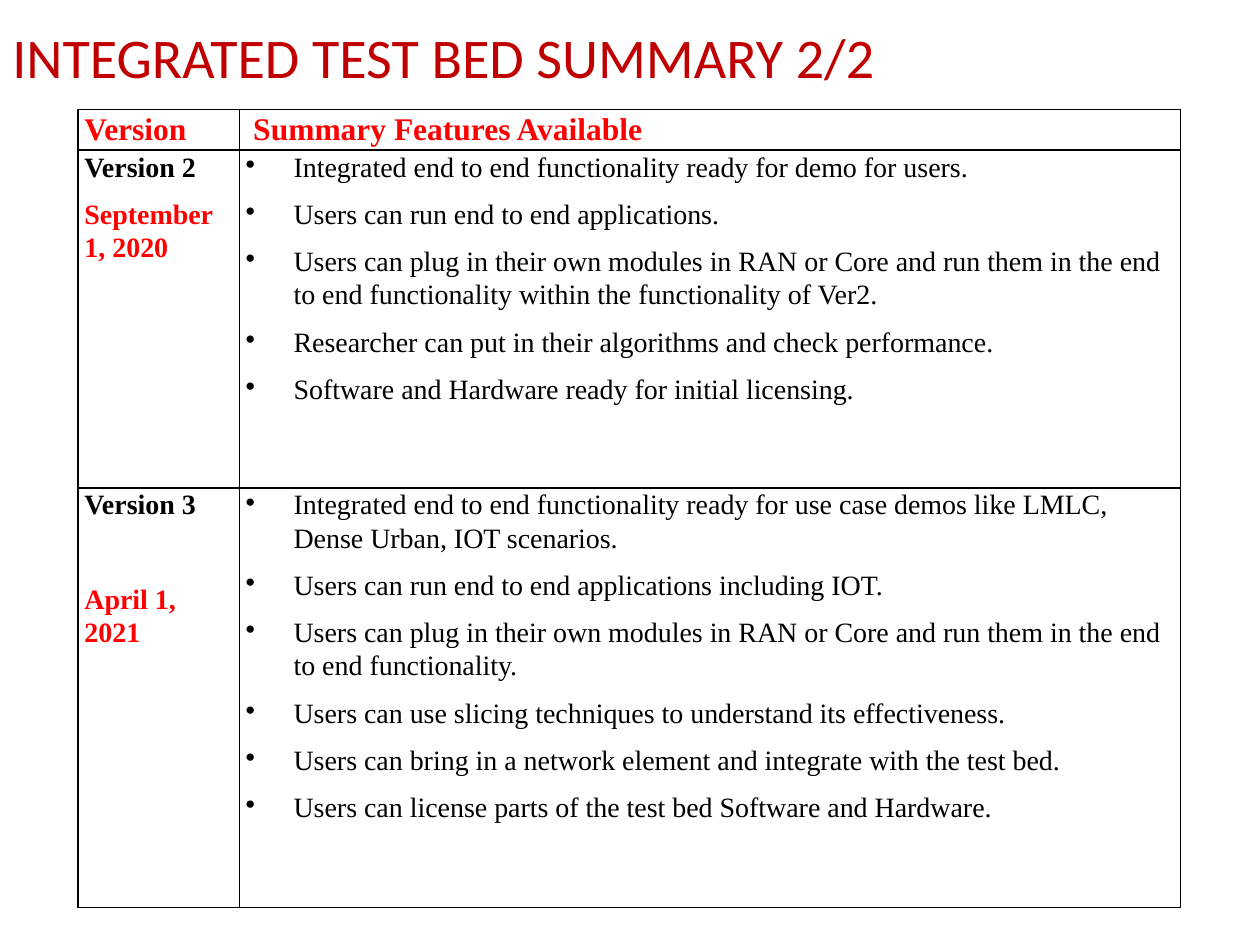
from pptx import Presentation
from pptx.dml.color import RGBColor
from pptx.enum.text import MSO_ANCHOR
from pptx.oxml.ns import qn
from pptx.util import Inches, Pt
from lxml import etree

MIDDLE = MSO_ANCHOR.MIDDLE
BLACK, RED, DARK_RED = "000000", "FF0000", "C00000"
TITLE_FONT, TABLE_FONT = "Calibri", "Times New Roman"

SLIDE_W, SLIDE_H = 10, 7.5
TABLE_LEFT, TABLE_TOP = 0.62, 0.87
COLUMN_WIDTHS = [1.28, 7.47]
ROW_HEIGHTS = [0.29, 2.68, 3.33]
CELL_INSET = 0.05
BULLET_INDENT = 0.38
HEADINGS = ["Version", "Summary Features Available"]
HEADING_INSETS = [CELL_INSET, 0.11]

# Version, date, space before the date in points, features
RELEASES = [
    ("Version 2", "September 1, 2020", 0, [
        "Integrated end to end functionality ready for demo for users.",
        "Users can run end to end applications.",
        "Users can plug in their own modules in RAN or Core and run them in "
        "the end to end functionality within the functionality of Ver2.",
        "Researcher can put in their algorithms and check performance.",
        "Software and Hardware ready for initial licensing.",
    ]),
    ("Version 3", "April 1, 2021", 27, [
        "Integrated end to end functionality ready for use case demos like "
        "LMLC, Dense Urban, IOT scenarios.",
        "Users can run end to end applications including IOT.",
        "Users can plug in their own modules in RAN or Core and run them in "
        "the end to end functionality.",
        "Users can use slicing techniques to understand its effectiveness.",
        "Users can bring in a network element and integrate with the test bed.",
        "Users can license parts of the test bed Software and Hardware.",
    ]),
]


def color(hex_string):
    return RGBColor.from_string(hex_string)


def add_run(paragraph, text, size, ink, font=TABLE_FONT, bold=False):
    run = paragraph.add_run()
    run.text = text
    run.font.size = Pt(size)
    run.font.name = font
    run.font.bold = bold
    run.font.color.rgb = color(ink)


def next_paragraph(cell):
    """Give the empty first paragraph of a cell, or a new one after it."""
    frame = cell.text_frame
    first = frame.paragraphs[0]
    paragraph = frame.add_paragraph() if first.runs else first
    paragraph.line_spacing = 1.07
    paragraph.space_after = Pt(8)
    return paragraph


def add_line(cell, text, size=16, ink=BLACK, before=0):
    paragraph = next_paragraph(cell)
    if before:
        paragraph.space_before = Pt(before)
    add_run(paragraph, text, size, ink, bold=True)


def add_bullet(cell, text):
    paragraph = next_paragraph(cell)
    properties = paragraph._p.get_or_add_pPr()
    properties.set("marL", str(Inches(BULLET_INDENT)))
    properties.set("indent", str(-Inches(BULLET_INDENT)))
    etree.SubElement(properties, qn("a:buChar"), char="•")
    add_run(paragraph, text, 16, BLACK)


def format_cell(cell):
    cell.margin_left = cell.margin_right = Inches(CELL_INSET)
    cell.margin_top = cell.margin_bottom = 0
    properties = cell._tc.get_or_add_tcPr()
    for side in ("lnL", "lnR", "lnT", "lnB"):
        border = etree.SubElement(properties, qn(f"a:{side}"), w=str(Pt(1)))
        fill = etree.SubElement(border, qn("a:solidFill"))
        etree.SubElement(fill, qn("a:srgbClr"), val=BLACK)
    cell.fill.background()


def add_title(slide, text):
    box = slide.shapes.add_textbox(0, 0, Inches(SLIDE_W), Inches(0.89))
    frame = box.text_frame
    frame.word_wrap = True
    frame.vertical_anchor = MIDDLE
    add_run(frame.paragraphs[0], text, 32, DARK_RED, TITLE_FONT)


def add_grid(slide):
    table = slide.shapes.add_table(
        len(ROW_HEIGHTS), len(COLUMN_WIDTHS),
        Inches(TABLE_LEFT), Inches(TABLE_TOP),
        Inches(sum(COLUMN_WIDTHS)), Inches(sum(ROW_HEIGHTS))).table
    table.first_row = table.horz_banding = False
    for column, width in zip(table.columns, COLUMN_WIDTHS):
        column.width = Inches(width)
    for row, height in zip(table.rows, ROW_HEIGHTS):
        row.height = Inches(height)
    for cell in table.iter_cells():
        format_cell(cell)
    return table


def main():
    deck = Presentation()
    deck.slide_width, deck.slide_height = Inches(SLIDE_W), Inches(SLIDE_H)
    slide = deck.slides.add_slide(deck.slide_layouts[6])

    add_title(slide, "INTEGRATED TEST BED SUMMARY 2/2")
    table = add_grid(slide)

    # Heading row
    for column, (heading, inset) in enumerate(zip(HEADINGS, HEADING_INSETS)):
        cell = table.cell(0, column)
        cell.margin_left = Inches(inset)
        add_line(cell, heading, 18, RED)

    # One row per release
    for row, (version, date, gap, features) in enumerate(RELEASES, start=1):
        release_cell, feature_cell = table.cell(row, 0), table.cell(row, 1)
        add_line(release_cell, version)
        add_line(release_cell, date, ink=RED, before=gap)
        for feature in features:
            add_bullet(feature_cell, feature)

    deck.save("out.pptx")


if __name__ == "__main__":
    main()
